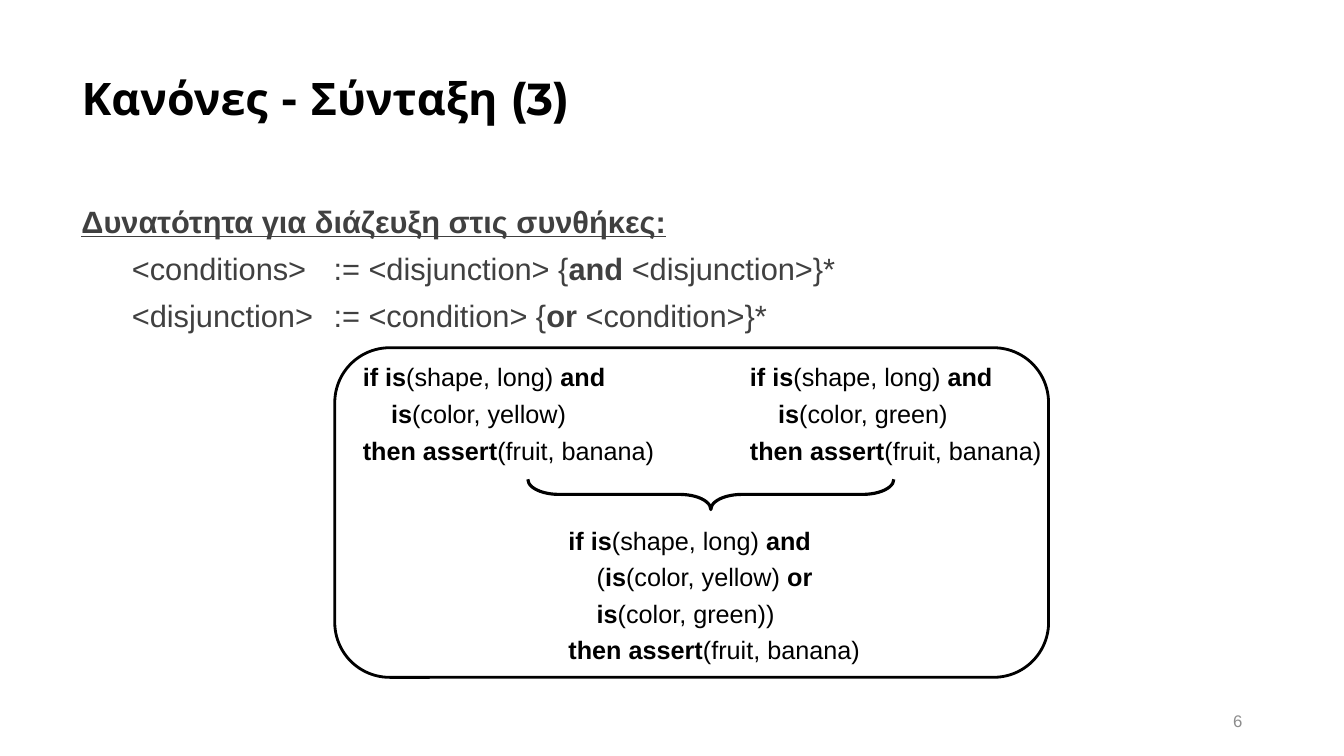
from lxml import etree
from pptx import Presentation
from pptx.dml.color import RGBColor
from pptx.enum.shapes import MSO_SHAPE as SHAPE
from pptx.enum.text import MSO_ANCHOR as ANCHOR, PP_ALIGN as ALIGN
from pptx.oxml.ns import qn
from pptx.util import Inches, Pt

COLORS = {"ink": "000000", "body": "404040", "number": "8C8C8C"}


def style(p, size, color, font="Arial"):
    p.font.size = Pt(size)
    p.font.name = font
    p.font.color.rgb = RGBColor.from_string(COLORS[color])


def add_text(box, lines, size, color, before, spacing=None):
    """Fill a text box; bars switch bold on and off, and indents are in inches."""
    tf = s.shapes.add_textbox(*map(Inches, box)).text_frame
    tf.word_wrap = True
    for i, (indent, line) in enumerate(lines):
        p = tf.paragraphs[0] if i == 0 else tf.add_paragraph()
        style(p, size, color)
        p.space_before = Pt(before)
        p.line_spacing = spacing
        if indent:
            p._p.get_or_add_pPr().set("marL", str(Inches(indent)))
        for j, part in enumerate(line.split("|")):
            if part:
                r = p.add_run()
                r.text = part
                r.font.bold = j % 2 == 1
    return tf


prs = Presentation()
prs.slide_width, prs.slide_height = Inches(13.33), Inches(7.5)
s = prs.slides.add_slide(prs.slide_layouts[5])

# Frame around the examples, and the brace that merges two rules into one
for kind, box, width in [
    (SHAPE.ROUNDED_RECTANGLE, (3.32, 3.45, 7.08, 3.27), 2),
    (SHAPE.RIGHT_BRACE, (6.9, 3.09, 0.3, 3.63), 2.25),
]:
    sp = s.shapes.add_shape(kind, *map(Inches, box))
    sp.shadow.inherit = False
    sp.fill.background()
    sp.line.color.rgb = RGBColor.from_string(COLORS["ink"])
    sp.line.width = Pt(width)
    if kind == SHAPE.RIGHT_BRACE:
        sp.rotation = 90
        sp.adjustments[0] = 1.03

# Title
title = s.shapes.title
title.left, title.top, title.width, title.height = map(Inches, (0.71, 0.28, 11.5, 1.45))
tf = title.text_frame
tf.text = "Κανόνες - Σύνταξη (3)"
tf.vertical_anchor = ANCHOR.MIDDLE
p = tf.paragraphs[0]
style(p, 32, "ink", "Montserrat")
p.font.bold = True
p.alignment = ALIGN.LEFT
p.line_spacing = 0.9

# Grammar
grammar = add_text((0.71, 2, 11.5, 1.4), [
    (0, "|Δυνατότητα για διάζευξη στις συνθήκες:|"),
    (0, "\t<conditions>\t:= <disjunction> {|and| <disjunction>}*"),
    (0, "\t<disjunction>\t:= <condition> {|or| <condition>}*"),
], 22, "body", 10, 0.9)
grammar.paragraphs[0].runs[0].font.underline = True

# Example rules
first = (0, "|if is|(shape, long) |and|")
last = (0, "|then assert|(fruit, banana)")
step = 0.28
for box, conditions in [
    ((3.5, 3.54, 3.75, 1.13), ["|is|(color, yellow)"]),
    ((7.34, 3.54, 3.74, 1.13), ["|is|(color, green)"]),
    ((5.54, 5.16, 3.66, 1.49), ["(|is|(color, yellow) |or|", "|is|(color, green))"]),
]:
    add_text(box, [first, *((step, c) for c in conditions), last], 18, "ink", 4.5)

# Slide number field
tf = s.shapes.add_textbox(*map(Inches, (9.42, 6.95, 3, 0.4))).text_frame
tf.word_wrap = True
tf.vertical_anchor = ANCHOR.MIDDLE
p = tf.paragraphs[0]
p.alignment = ALIGN.RIGHT
style(p, 12, "number")
r = p.add_run()
r.text = "6"
prs.save("out.pptx")
